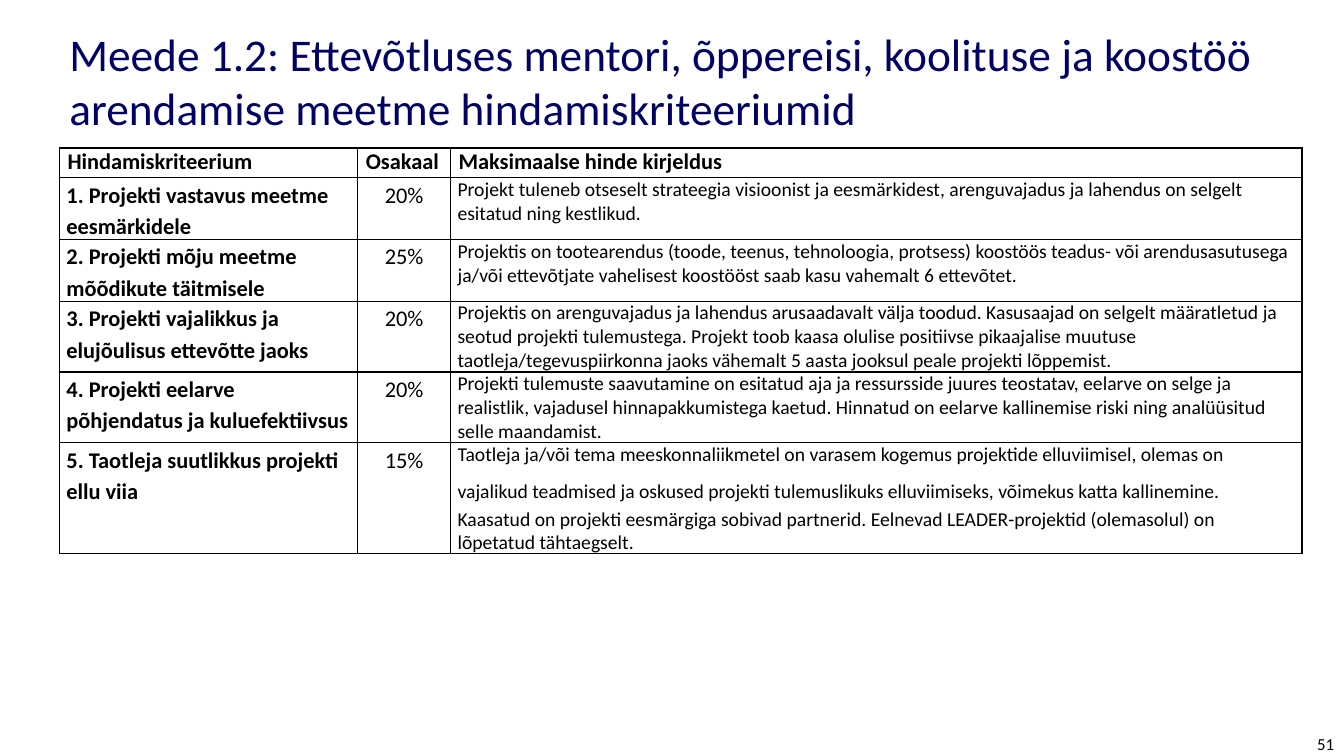
from dataclasses import dataclass

from lxml.etree import SubElement
from pptx import Presentation
from pptx.dml.color import RGBColor
from pptx.enum.text import MSO_ANCHOR, PP_ALIGN
from pptx.oxml.ns import qn
from pptx.slide import Slide
from pptx.table import _Cell
from pptx.text.text import _Paragraph
from pptx.util import Emu, Inches, Pt

COLOURS = {"title": "010163", "ink": "000000", "paper": "FFFFFF"}
FONT = "Calibri"

# Grid of 160 columns by 90 rows over the whole slide
SLIDE_WIDTH, SLIDE_HEIGHT = Inches(13.33), Inches(7.5)
GRID_COLUMNS, GRID_ROWS = 160, 90
CRITERIA_COLUMNS = (35.52, 11.04, 101.4)
CRITERIA_ROWS = (3.12, 6, 6, 6, 6, 3.6)


@dataclass(frozen=True)
class Area:
    column: float
    row: float
    columns: float
    rows: float


@dataclass(frozen=True)
class Style:
    size: float
    bold: bool = False
    colour: str = "ink"
    align: PP_ALIGN = PP_ALIGN.LEFT
    line_spacing: float = 1.0
    space_after: float = 0


@dataclass(frozen=True)
class Criterion:
    name: str
    weight: str
    description: tuple[str, ...]


TITLE = Style(32.4, colour="title")
NUMBER = Style(12, align=PP_ALIGN.RIGHT)
HEADING = Style(16, bold=True, line_spacing=0.8)
NAME = Style(16, bold=True, line_spacing=1.15, space_after=6)
WEIGHT = Style(16, align=PP_ALIGN.CENTER, line_spacing=1.15, space_after=6)
DESCRIPTION = Style(14)

HEADINGS = ("Hindamiskriteerium", "Osakaal", "Maksimaalse hinde kirjeldus")
PARTNERS = ("Kaasatud on projekti eesmärgiga sobivad partnerid. Eelnevad "
            "LEADER-projektid (olemasolul) on lõpetatud tähtaegselt.")
CRITERIA = (
    Criterion("1. Projekti vastavus meetme eesmärkidele", "20%", (
        "Projekt tuleneb otseselt strateegia visioonist ja eesmärkidest, arenguvajadus ja "
        "lahendus on selgelt esitatud ning kestlikud.",)),
    Criterion("2. Projekti mõju meetme mõõdikute täitmisele", "25%", (
        "Projektis on tootearendus (toode, teenus, tehnoloogia, protsess) koostöös teadus- või "
        "arendusasutusega ja/või ettevõtjate vahelisest koostööst saab kasu vahemalt 6 "
        "ettevõtet.",)),
    Criterion("3. Projekti vajalikkus ja elujõulisus ettevõtte jaoks", "20%", (
        "Projektis on arenguvajadus ja lahendus arusaadavalt välja toodud. Kasusaajad on "
        "selgelt määratletud ja seotud projekti tulemustega. Projekt toob kaasa olulise "
        "positiivse pikaajalise muutuse taotleja/tegevuspiirkonna jaoks vähemalt 5 aasta "
        "jooksul peale projekti lõppemist.",)),
    Criterion("4. Projekti eelarve põhjendatus ja kuluefektiivsus", "20%", (
        "Projekti tulemuste saavutamine on esitatud aja ja ressursside juures teostatav, "
        "eelarve on selge ja realistlik, vajadusel hinnapakkumistega kaetud. Hinnatud on "
        "eelarve kallinemise riski ning analüüsitud selle maandamist.",)),
    Criterion("5. Taotleja suutlikkus projekti ellu viia", "15%", (
        "Taotleja ja/või tema meeskonnaliikmetel on varasem kogemus projektide elluviimisel, "
        "olemas on",
        "vajalikud teadmised ja oskused projekti tulemuslikuks elluviimiseks, võimekus katta "
        "kallinemine.")),
)


def across(columns: float) -> Emu:
    return Emu(round(SLIDE_WIDTH * columns / GRID_COLUMNS))


def down(rows: float) -> Emu:
    return Emu(round(SLIDE_HEIGHT * rows / GRID_ROWS))


def place(area: Area) -> tuple[Emu, Emu, Emu, Emu]:
    return across(area.column), down(area.row), across(area.columns), down(area.rows)


def write(paragraph: _Paragraph, text: str, style: Style) -> None:
    paragraph.text = text
    paragraph.alignment = style.align
    paragraph.line_spacing = style.line_spacing
    paragraph.space_after = Pt(style.space_after)
    paragraph.font.name = FONT
    paragraph.font.size = Pt(style.size)
    paragraph.font.bold = style.bold
    paragraph.font.color.rgb = RGBColor.from_string(COLOURS[style.colour])


def add_label(slide: Slide, area: Area, text: str, style: Style) -> None:
    frame = slide.shapes.add_textbox(*place(area)).text_frame
    frame.word_wrap = True
    frame.vertical_anchor = MSO_ANCHOR.MIDDLE
    write(frame.paragraphs[0], text, style)


def set_borders(cell: _Cell, widths: dict[str, float]) -> None:
    properties = cell._tc.get_or_add_tcPr()
    for position, (edge, width) in enumerate(widths.items()):
        line = SubElement(properties, qn(f"a:{edge}"), w=str(Pt(width)))
        fill = SubElement(line, qn("a:solidFill"))
        SubElement(fill, qn("a:srgbClr"), val=COLOURS["ink"])
        properties.insert(position, line)


def fill_cell(cell: _Cell, texts: tuple[str, ...], style: Style) -> None:
    is_heading = style is HEADING
    cell.margin_left = cell.margin_right = Inches(0.08 if is_heading else 0.07)
    cell.margin_top = cell.margin_bottom = Inches(0.04 if is_heading else 0)
    cell.vertical_anchor = MSO_ANCHOR.MIDDLE if is_heading else MSO_ANCHOR.TOP
    cell.fill.solid()
    cell.fill.fore_color.rgb = RGBColor.from_string(COLOURS["paper"])
    frame = cell.text_frame
    for index, text in enumerate(texts):
        write(frame.paragraphs[0] if index == 0 else frame.add_paragraph(), text, style)


def add_criteria(slide: Slide, column: float, row: float) -> None:
    area = Area(column, row, sum(CRITERIA_COLUMNS), sum(CRITERIA_ROWS))
    last_row, last_column = len(CRITERIA_ROWS) - 1, len(CRITERIA_COLUMNS) - 1
    table = slide.shapes.add_table(last_row + 1, last_column + 1, *place(area)).table
    table.first_row = table.horz_banding = False
    for table_column, columns in zip(table.columns, CRITERIA_COLUMNS):
        table_column.width = across(columns)
    for table_row, rows in zip(table.rows, CRITERIA_ROWS):
        table_row.height = down(rows)

    # Heading row, then one row per criterion
    contents = [[((heading,), HEADING) for heading in HEADINGS]]
    contents += [[((item.name,), NAME), ((item.weight,), WEIGHT),
                  (item.description, DESCRIPTION)] for item in CRITERIA]
    for r, row_contents in enumerate(contents):
        for c, (texts, style) in enumerate(row_contents):
            cell = table.cell(r, c)
            fill_cell(cell, texts, style)
            set_borders(cell, {
                "lnL": 1.5 if c == 0 else 1,
                "lnR": 1.5 if c == last_column else 1,
                "lnT": 1.5 if r == 0 else 1,
                "lnB": 1.5 if r == last_row else 1,
            })

    # The large space that opens up the line before the partners
    closing = table.cell(last_row, last_column).text_frame.paragraphs[-1]
    wide_space = closing.add_run()
    wide_space.text = " "
    wide_space.font.size = Pt(24)
    closing.add_run().text = PARTNERS


def main() -> None:
    presentation = Presentation()
    presentation.slide_width, presentation.slide_height = SLIDE_WIDTH, SLIDE_HEIGHT
    slide = presentation.slides.add_slide(presentation.slide_layouts[6])

    # Title
    add_label(slide, Area(7.08, 2.04, 143.52, 15),
              "Meede 1.2: Ettevõtluses mentori, õppereisi, koolituse ja koostöö "
              "arendamise meetme hindamiskriteeriumid", TITLE)
    # Assessment criteria
    add_criteria(slide, 7.08, 17.64)
    # Slide number
    add_label(slide, Area(140.52, 87, 19.48, 3), "51", NUMBER)

    presentation.save("out.pptx")


if __name__ == "__main__":
    main()
